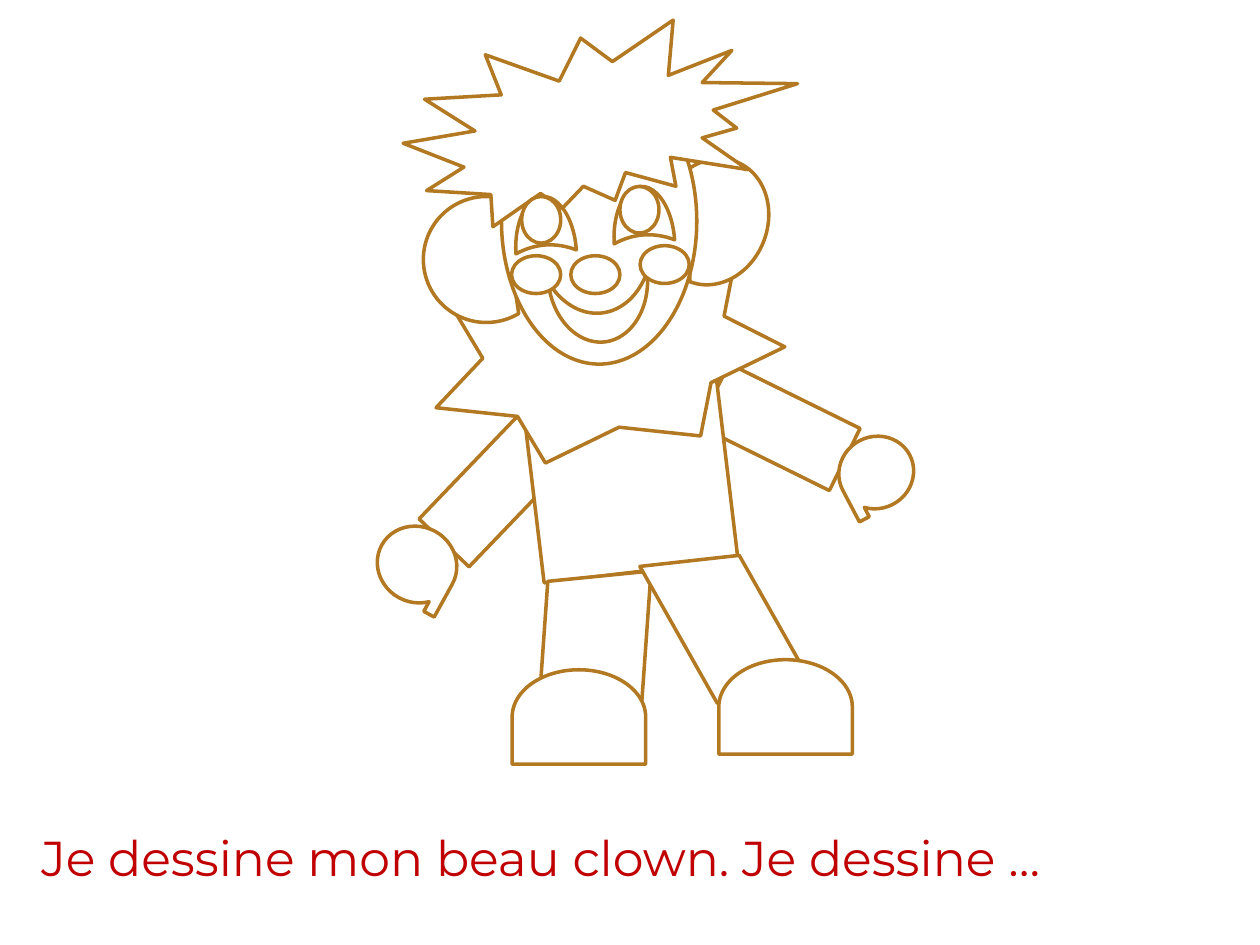
from dataclasses import dataclass, replace

import pptx
import pptx.dml.color
import pptx.enum.shapes
import pptx.enum.text
import pptx.util

Kind = pptx.enum.shapes.MSO_SHAPE
COLORS = {"paper": "FFFFFF", "outline": "B27822", "caption": "C00000"}
COLUMNS, ROWS = 100, 75


@dataclass(frozen=True)
class Part:
    kind: Kind
    column: float
    row: float
    columns: float
    rows: float
    rotation: float = 0
    adjustment: float | None = None
    filled: bool = True
    flips: tuple[str, ...] = ()

    def shifted(self, columns: float, rows: float) -> "Part":
        return replace(self, column=self.column + columns, row=self.row + rows)


LEFT_EYE = Part(Kind.MOON, 41, 15.4, 4.4, 4.8, 86.2, 0.875, filled=False)
LEFT_PUPIL = Part(Kind.OVAL, 41.4, 15.6, 3.1, 3.7)
EYE_SHIFT = (7.8, -0.8)
NOSE = Part(Kind.OVAL, 45.3, 20.3, 3.9, 3)
LEFT_SHOE = Part(Kind.FLOWCHART_DELAY, 42.2, 51.6, 7.5, 10.6, 270)
HAND = Kind.FLOWCHART_SEQUENTIAL_ACCESS_STORAGE

ARMS = [
    Part(Kind.RECTANGLE, 59.1, 28.1, 5.5, 11.6, 296.3),
    Part(Kind.RECTANGLE, 36.5, 33.1, 5.5, 11.6, 43.8),
]
BODY = [
    Part(Kind.RECTANGLE, 42.2, 29.7, 15.5, 15.7, 353.2),
    Part(Kind.STAR_7_POINT, 34, 19.5, 28.1, 16.3, 350.1),
]
HEAD = [
    Part(Kind.CHORD, 52.3, 12.5, 8.6, 10.2, 201.3),
    Part(Kind.CHORD, 33.6, 15.6, 10, 10, 14.1),
    Part(Kind.OVAL, 39.8, 6.2, 15.5, 22.7),
    Part(Kind.EXPLOSION2, 32, 1.6, 31.3, 16.4),
]
FACE = [
    Part(Kind.MOON, 45.1, 20.6, 5.2, 7.9, 264.2, 0.443),
    LEFT_EYE,
    LEFT_EYE.shifted(*EYE_SHIFT),
    LEFT_PUPIL,
    LEFT_PUPIL.shifted(*EYE_SHIFT),
    NOSE,
    NOSE.shifted(-4.7, 0),
    NOSE.shifted(5.5, -0.8),
]
LEGS = [
    Part(Kind.FLOWCHART_DATA, 42, 45.8, 10.3, 12, 354.3),
    Part(Kind.FLOWCHART_DATA, 50, 46.3, 15.6, 7.3, 60.5),
    LEFT_SHOE,
    LEFT_SHOE.shifted(16.4, -0.8),
]
HANDS = [
    Part(HAND, 30.1, 41.6, 6, 6.4, 118.8, flips=("flipV",)),
    Part(HAND, 66.7, 34.5, 5.7, 6, 242.3, flips=("flipH", "flipV")),
]


def color(name: str) -> pptx.dml.color.RGBColor:
    return pptx.dml.color.RGBColor.from_string(COLORS[name])


def set_attributes(target: object, values: dict) -> None:
    for name, value in values.items():
        setattr(target, name, value)


def place(deck, column: float, row: float, columns: float, rows: float) -> list[int]:
    cell_width = deck.slide_width / COLUMNS
    cell_height = deck.slide_height / ROWS
    return [
        round(column * cell_width),
        round(row * cell_height),
        round(columns * cell_width),
        round(rows * cell_height),
    ]


def draw_part(deck, page, part: Part) -> None:
    shape = page.shapes.add_shape(
        part.kind, *place(deck, part.column, part.row, part.columns, part.rows)
    )
    shape.rotation = part.rotation
    shape.shadow.inherit = False
    if part.adjustment is not None:
        shape.adjustments[0] = part.adjustment
    if part.filled:
        shape.fill.solid()
        shape.fill.fore_color.rgb = color("paper")
    else:
        shape.fill.background()
    shape.line.color.rgb = color("outline")
    shape.line.width = pptx.util.Pt(2)
    for flip in part.flips:
        shape._element.spPr.get_or_add_xfrm().set(flip, "1")


def draw_caption(deck, page, text: str) -> None:
    box = page.shapes.add_textbox(*place(deck, 2.3, 65.2, 92.1, 9.8))
    set_attributes(
        box.text_frame,
        {"word_wrap": True, "vertical_anchor": pptx.enum.text.MSO_ANCHOR.TOP},
    )
    span = box.text_frame.paragraphs[0].add_run()
    span.text = text
    set_attributes(span.font, {"name": "Montserrat", "size": pptx.util.Pt(28)})
    span.font.color.rgb = color("caption")


def main() -> None:
    deck = pptx.Presentation()
    set_attributes(
        deck,
        {"slide_width": pptx.util.Inches(10), "slide_height": pptx.util.Inches(7.5)},
    )
    page = deck.slides.add_slide(deck.slide_layouts[6])
    for part in ARMS + BODY + HEAD + FACE + LEGS + HANDS:
        draw_part(deck, page, part)
    draw_caption(deck, page, "Je dessine mon beau clown. Je dessine …")
    deck.save("out.pptx")


if __name__ == "__main__":
    main()
